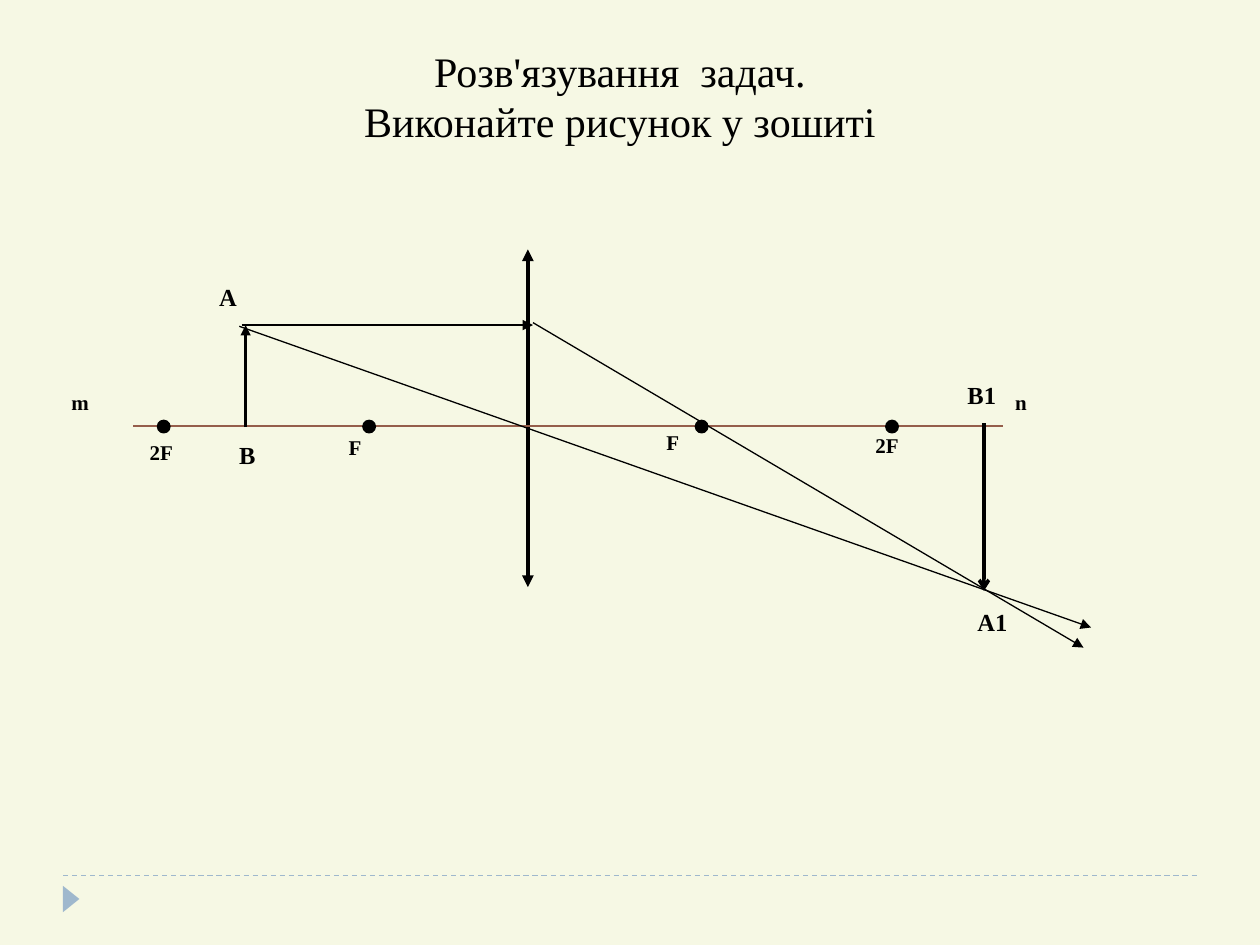
from lxml import etree
from pptx import Presentation
from pptx.dml.color import RGBColor
from pptx.enum import dml, shapes, text
from pptx.oxml.ns import qn
from pptx.util import Pt

FONT = "Times New Roman"
BLACK = RGBColor(0x00, 0x00, 0x00)
CREAM = RGBColor(0xF6, 0xF8, 0xE4)
BROWN = RGBColor(0x95, 0x5E, 0x4B)
BLUE = RGBColor(0x9F, 0xB8, 0xCD)

TITLE_LINES = ["Розв'язування  задач.", "Виконайте рисунок у зошиті"]

# All diagram offsets are in points from the optical centre of the lens.
# Lines: start, end, width, colour, start arrowhead, end arrowhead
LENS = ((0, -100.8), (0, 92.1), 2.25, BLACK, "triangle", "triangle")
AXIS = ((-225.4, 0), (271.4, 0), 1.5, BROWN, None, None)
PARALLEL_RAY = ((-163.5, -57.6), (2.9, -57.6), 0.75, BLACK, None, "triangle")
REFRACTED_RAY = ((2.9, -59), (317.5, 126.7), 0.75, BLACK, None, "triangle")
CENTRAL_RAY = ((-164.9, -56.9), (321.8, 115.2), 0.75, BLACK, None, "triangle")
OBJECT_ARROW = ((-161.3, 0.7), (-161.3, -57.6), 1.5, BLACK, None, "triangle")
IMAGE_ARROW = ((260.6, -1.5), (260.6, 94.3), 2, BLACK, None, "arrow")
DIAGRAM_LINES = [LENS, AXIS, PARALLEL_RAY, REFRACTED_RAY, CENTRAL_RAY,
                 OBJECT_ARROW, IMAGE_ARROW]

FOCUS_OFFSETS = [-208.1, -90.7, 99.3, 208.1]
DOT_SIZE = 7.2

# Labels: wording, left, top, font size
LABELS = [
    ("F", -109.5, 1.4, 12), ("F", 72, -1.5, 12),
    ("2F", -223.2, 4.3, 12), ("2F", 191.5, 0, 12),
    ("m", -267.9, -24.5, 12), ("n", 271.4, -24.5, 12),
    ("А", -183.6, -85.7, 14), ("B", -172.1, 4.3, 14),
    ("А1", 249.8, 100, 14), ("B1", 244.1, -29.6, 14),
]
LABEL_SIZE = (66.2, 54)


def add_run(paragraph, wording, size, bold=False):
    run = paragraph.add_run()
    run.text = wording
    run.font.name = FONT
    run.font.size = Pt(size)
    run.font.bold = bold
    run.font.color.rgb = BLACK


def add_line(slide, start, end, width, color, head=None, tail=None):
    line = slide.shapes.add_connector(
        shapes.MSO_CONNECTOR.STRAIGHT, *(Pt(value) for value in (*start, *end)))
    line.line.width = Pt(width)
    line.line.color.rgb = color
    outline = line.line._get_or_add_ln()
    for tag, kind in (("a:headEnd", head), ("a:tailEnd", tail)):
        if kind:
            etree.SubElement(outline, qn(tag), type=kind)
    etree.SubElement(line._element.spPr, qn("a:effectLst"))
    return line


def add_solid(slide, kind, left, top, width, height, color):
    shape = slide.shapes.add_shape(kind, Pt(left), Pt(top), Pt(width), Pt(height))
    shape.shadow.inherit = False
    shape.fill.solid()
    shape.fill.fore_color.rgb = color
    shape.line.fill.background()
    return shape


def add_label(slide, wording, left, top, size):
    width, height = LABEL_SIZE
    box = slide.shapes.add_textbox(Pt(left), Pt(top), Pt(width), Pt(height))
    box.text_frame.word_wrap = True
    add_run(box.text_frame.paragraphs[0], wording, size, bold=True)


def fill_title(slide, left, top, width, height):
    title = slide.shapes.title
    title.left, title.top = Pt(left), Pt(top)
    title.width, title.height = Pt(width), Pt(height)
    frame = title.text_frame
    frame.word_wrap = True
    frame.auto_size = text.MSO_AUTO_SIZE.NONE
    frame.vertical_anchor = text.MSO_ANCHOR.TOP
    for index, wording in enumerate(TITLE_LINES):
        paragraph = frame.add_paragraph() if index else frame.paragraphs[0]
        paragraph.alignment = text.PP_ALIGN.CENTER
        paragraph.space_before = Pt(0)
        add_run(paragraph, wording, 24)


def add_lens_diagram(slide, left, top, width, height):
    """Place the optical centre by its share of the box, then draw around it."""
    center_x = left + 0.454 * width
    center_y = top + 0.443 * height

    def place(point):
        return center_x + point[0], center_y + point[1]

    for start, end, *style in DIAGRAM_LINES:
        add_line(slide, place(start), place(end), *style)
    for offset in FOCUS_OFFSETS:
        x, y = place((offset - DOT_SIZE / 2, -DOT_SIZE / 2 + 0.4))
        dot = add_solid(slide, shapes.MSO_SHAPE.OVAL, x, y, DOT_SIZE, DOT_SIZE, BLACK)
        dot.line.color.rgb = BLACK
        dot.line.width = Pt(0.75)
    for wording, x, y, size in LABELS:
        add_label(slide, wording, *place((x, y)), size)


def add_footer(slide, left, top, width):
    rule = add_line(slide, (left, top), (left + width, top), 0.75, BLUE)
    rule.line.dash_style = dml.MSO_LINE.DASH
    marker = add_solid(slide, shapes.MSO_SHAPE.ISOSCELES_TRIANGLE,
                       left - 2.9, top + 8.6, 15.1, 9.4, BLUE)
    marker.rotation = 90


def main():
    presentation = Presentation()
    presentation.slide_width, presentation.slide_height = Pt(720), Pt(540)
    slide = presentation.slides.add_slide(presentation.slide_layouts.get_by_name("Title Only"))
    slide.background.fill.solid()
    slide.background.fill.fore_color.rgb = CREAM
    add_footer(slide, 36, 500.4, 648)
    add_lens_diagram(slide, 33.8, 142.6, 590, 227.5)
    fill_title(slide, 168.5, 22.3, 371.5, 65.5)
    presentation.save("out.pptx")


if __name__ == "__main__":
    main()
